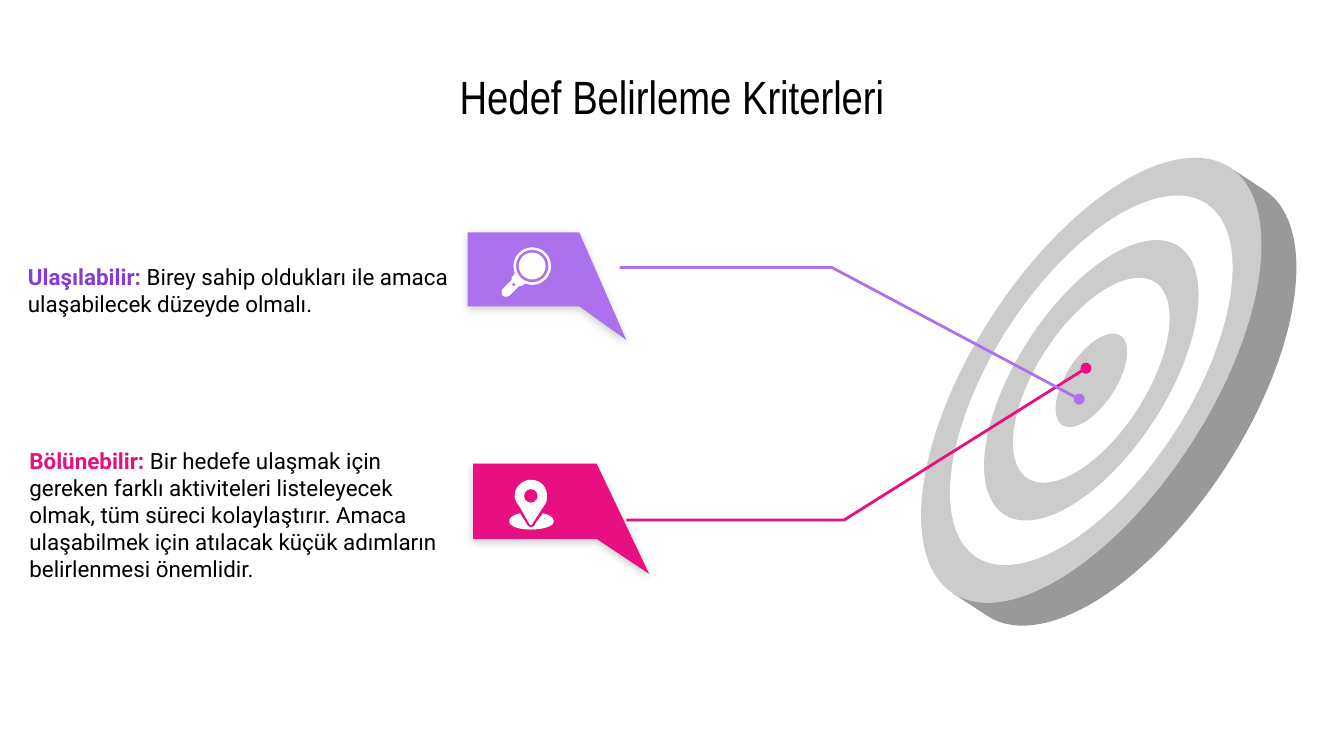
import math

from lxml import etree
from pptx import Presentation
from pptx.dml.color import RGBColor
from pptx.enum import shapes, text
from pptx.oxml.ns import qn
from pptx.util import Inches, Pt

COLORS = {"white": "FFFFFF", "black": "000000", "ring": "CCCCCC", "side": "999999",
          "purple": "AC71EC", "purple_text": "833CD8", "pink": "E81080"}

TITLE = "Hedef Belirleme Kriterleri"
CRITERIA = [
    {"label": "Bölünebilir: ",
     "body": "Bir hedefe ulaşmak için gereken farklı aktiviteleri listeleyecek olmak, "
             "tüm süreci kolaylaştırır. Amaca ulaşabilmek için atılacak küçük adımların "
             "belirlenmesi önemlidir.",
     "color": "pink", "label_color": "pink", "box": (0.12, 3.52, 3.32, 0.62),
     "flag": [(3.52, 3.45), (3.52, 4.01), (4.44, 4.01), (4.83, 4.27), (4.44, 3.45)],
     "pointer": [(4.66, 3.87), (6.28, 3.87), (8.08, 2.74)]},
    {"label": "Ulaşılabilir: ",
     "body": "Birey sahip oldukları ile amaca ulaşabilecek düzeyde olmalı.",
     "color": "purple", "label_color": "purple_text", "box": (0.11, 1.85, 3.37, 0.62),
     "flag": [(3.48, 1.73), (3.48, 2.28), (4.31, 2.28), (4.66, 2.53), (4.31, 1.73)],
     "pointer": [(4.61, 1.99), (6.19, 1.99), (8.03, 2.97)]},
]

# Target: ellipses sharing one centre and tilt, each a share of the outer one
CENTER = (8.12, 2.83)
SEMI_AXES = (0.88, 1.89)
TILT = 33
DEPTH = (0.26, 0.17)
RINGS = [(1, "ring"), (0.83, "white"), (0.63, "ring"), (0.46, "white"), (0.21, "ring")]

# Icon outlines: a pair is a line end, six numbers are a Bézier segment
HANDLE = [(3.83, 2.03), (3.82, 2.05), (3.81, 2.06, 3.8, 2.07, 3.81, 2.08), (3.74, 2.15),
          (3.73, 2.16, 3.73, 2.18, 3.74, 2.2), (3.75, 2.21, 3.78, 2.21, 3.79, 2.2),
          (3.86, 2.13), (3.87, 2.13, 3.89, 2.13, 3.89, 2.12), (3.91, 2.11)]
HANDLE_GAP = [(3.82, 2.1), (3.84, 2.12), (3.82, 2.13), (3.81, 2.12)]
PIN = [(3.95, 3.57), (3.89, 3.57, 3.83, 3.62, 3.83, 3.69), (3.83, 3.71, 3.84, 3.74, 3.86, 3.76),
       (3.94, 3.9), (3.95, 3.91, 3.96, 3.91, 3.96, 3.9), (4.05, 3.76),
       (4.07, 3.74, 4.07, 3.71, 4.07, 3.69), (4.07, 3.62, 4.02, 3.57, 3.95, 3.57)]
PIN_BASE = [(3.87, 3.82), (3.82, 3.83, 3.79, 3.85, 3.79, 3.88),
            (3.79, 3.92, 3.87, 3.94, 3.95, 3.94), (4.03, 3.94, 4.12, 3.92, 4.12, 3.88),
            (4.12, 3.85, 4.09, 3.83, 4.04, 3.82), (3.98, 3.9),
            (3.98, 3.92, 3.96, 3.92, 3.95, 3.92), (3.94, 3.92, 3.93, 3.92, 3.92, 3.9)]


def rgb(name):
    return RGBColor.from_string(COLORS[name])


def paint(shape, color):
    shape.shadow.inherit = False
    shape.fill.solid()
    shape.fill.fore_color.rgb = rgb(color)
    shape.line.fill.background()
    return shape


def flatten(outline, steps=10):
    """Turn line ends and Bézier segments into plain points."""
    points = [outline[0]]
    for segment in outline[1:]:
        if len(segment) == 2:
            points.append(segment)
            continue
        controls = [points[-1], segment[:2], segment[2:4], segment[4:]]
        for step in range(1, steps + 1):
            t = step / steps
            weights = [math.comb(3, i) * t**i * (1 - t)**(3 - i) for i in range(4)]
            points.append(tuple(sum(w * c[axis] for w, c in zip(weights, controls))
                                for axis in (0, 1)))
    return points


def add_outline(slide, *outlines, closed=True):
    contours = [[(Inches(x), Inches(y)) for x, y in flatten(o)] for o in outlines]
    builder = slide.shapes.build_freeform(*contours[0][0])
    for index, contour in enumerate(contours):
        if index:
            builder.move_to(*contour[0])
        builder.add_line_segments(contour[1:], close=closed)
    return builder.convert_to_shape()


def add_ellipse(slide, center, semi_axes, color, tilt=0):
    (x, y), (a, b) = center, semi_axes
    shape = slide.shapes.add_shape(shapes.MSO_SHAPE.OVAL, Inches(x - a), Inches(y - b),
                                   Inches(2 * a), Inches(2 * b))
    shape.rotation = tilt
    return paint(shape, color)


def add_target(slide):
    tilt = math.radians(TILT)

    def rim(degrees, offset=(0, 0)):
        angle = math.radians(degrees)
        x, y = SEMI_AXES[0] * math.cos(angle), SEMI_AXES[1] * math.sin(angle)
        return (CENTER[0] + offset[0] + x * math.cos(tilt) - y * math.sin(tilt),
                CENTER[1] + offset[1] + x * math.sin(tilt) + y * math.cos(tilt))

    side = [rim(-90)] + [rim(d, DEPTH) for d in range(-90, 91, 3)] + [rim(90)]
    paint(add_outline(slide, side), "side")
    for share, color in RINGS:
        add_ellipse(slide, CENTER, [share * axis for axis in SEMI_AXES], color, TILT)


def add_flag(slide, points, color):
    shape = paint(add_outline(slide, points), color)
    effects = shape._element.spPr.find(qn("a:effectLst"))
    shadow = etree.SubElement(effects, qn("a:outerShdw"), blurRad=str(Pt(4.5)),
                              dist=str(Pt(1.5)), dir="5400000", algn="bl", rotWithShape="0")
    shade = etree.SubElement(shadow, qn("a:srgbClr"), val=COLORS["black"])
    etree.SubElement(shade, qn("a:alpha"), val="20000")


def add_pointer(slide, points, color):
    shape = add_outline(slide, points, closed=False)
    shape.shadow.inherit = False
    shape.fill.background()
    shape.line.color.rgb = rgb(color)
    shape.line.width = Pt(1.5)
    etree.SubElement(shape.line._get_or_add_ln(), qn("a:tailEnd"), type="oval")


def add_text(slide, box, runs, font, size, align):
    """Runs are (text, color, bold)."""
    frame = slide.shapes.add_textbox(*map(Inches, box)).text_frame
    frame.word_wrap = True
    frame.vertical_anchor = text.MSO_ANCHOR.MIDDLE
    frame.margin_left = frame.margin_right = Inches(0.1)
    frame.margin_top = frame.margin_bottom = Inches(0.1)
    paragraph = frame.paragraphs[0]
    paragraph.alignment = align
    for content, color, bold in runs:
        run = paragraph.add_run()
        run.text = content
        run.font.name = font
        run.font.size = Pt(size)
        run.font.bold = bold
        run.font.color.rgb = rgb(color)


def add_magnifier(slide):
    lens = (3.96, 1.98)
    paint(add_outline(slide, HANDLE, HANDLE_GAP), "white")
    for radius, color in [(0.14, "white"), (0.12, "purple"), (0.1, "white")]:
        add_ellipse(slide, lens, (radius, radius), color)


def add_pin(slide):
    paint(add_outline(slide, PIN), "white")
    add_ellipse(slide, (3.95, 3.69), (0.05, 0.05), "pink")
    paint(add_outline(slide, PIN_BASE), "white")


def main():
    presentation = Presentation()
    presentation.slide_width = Inches(10)
    presentation.slide_height = Inches(10 * 9 / 16)
    slide = presentation.slides.add_slide(presentation.slide_layouts[6])

    add_target(slide)
    for item in CRITERIA:
        add_flag(slide, item["flag"], item["color"])
        add_pointer(slide, item["pointer"], item["color"])
    add_text(slide, (0.5, 0.45, 9, 0.53), [(TITLE, "black", False)],
             "Arial Narrow", 25, text.PP_ALIGN.CENTER)
    for item in CRITERIA:
        runs = [(item["label"], item["label_color"], True), (item["body"], "black", False)]
        add_text(slide, item["box"], runs, "Roboto", 12, text.PP_ALIGN.LEFT)
    add_magnifier(slide)
    add_pin(slide)
    presentation.save("out.pptx")


if __name__ == "__main__":
    main()
